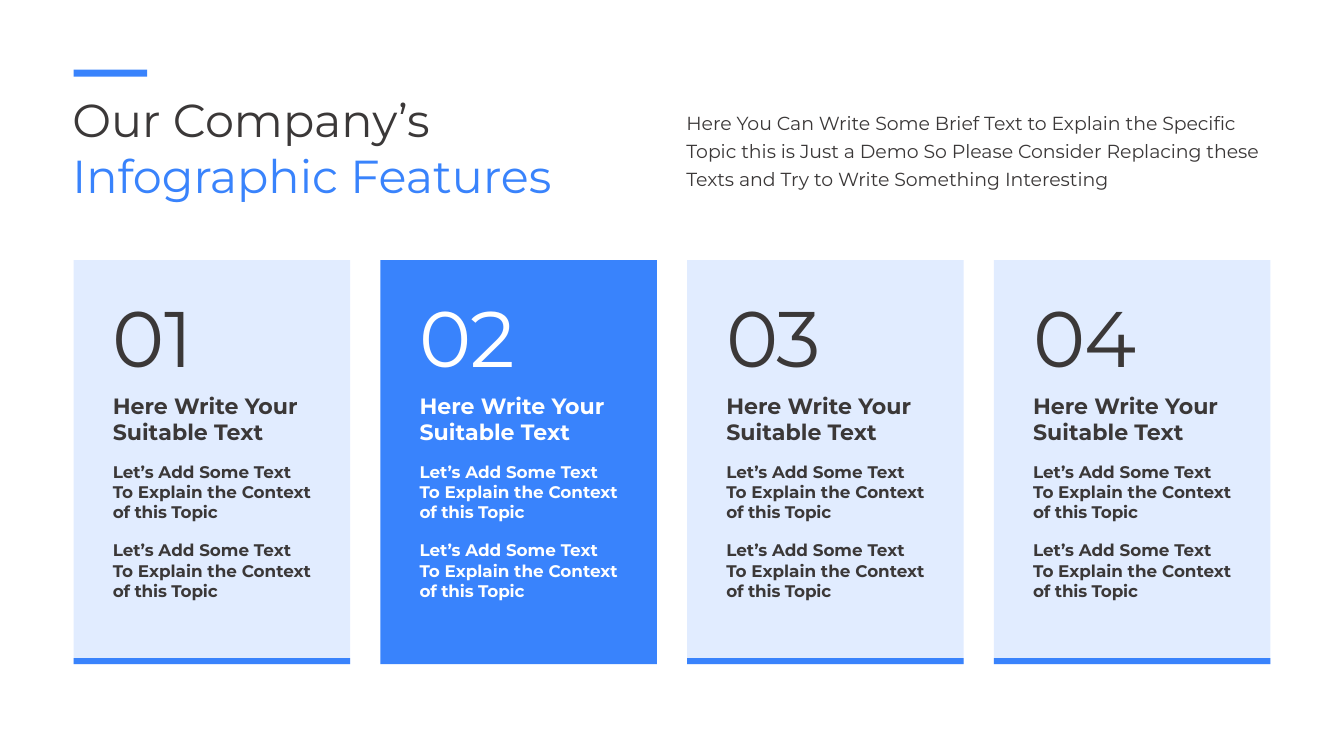
from pptx import Presentation, util as u
from pptx.dml.color import RGBColor
from pptx.enum import shapes, text

COLORS = {"ink": "3B3838", "blue": "3983FC", "pale": "E1ECFF", "white": "FFFFFF"}

TITLE = [("Our Company’s", "ink"), ("Infographic Features", "blue")]
INTRO = ("Here You Can Write Some Brief Text to Explain the Specific Topic this is "
         "Just a Demo So Please Consider Replacing these Texts and Try to Write "
         "Something Interesting")
HEADING = ["Here Write Your", "Suitable Text"]
DETAIL = ["Let’s Add Some Text", "To Explain the Context", "of this Topic"]
CARDS = [
    {"number": "01", "number_width": 1.05, "fill": "pale", "ink": "ink"},
    {"number": "02", "number_width": 1.2, "fill": "blue", "ink": "white"},
    {"number": "03", "number_width": 1.2, "fill": "pale", "ink": "ink"},
    {"number": "04", "number_width": 1.27, "fill": "pale", "ink": "ink"},
]
FORMATS = {
    "title": {"size": u.Pt(33)},
    "intro": {"size": u.Pt(13.5)},
    "number": {"size": u.Pt(56.2)},
    "heading": {"size": u.Pt(15.8), "bold": True},
    "detail": {"size": u.Pt(12), "bold": True},
}
TRACKING = {"number": "-60", "of this Topic": "-10"}

SLIDE_WIDTH, SLIDE_HEIGHT = 13.33, 7.5
MARGIN, GAP = 0.73, 0.3
PITCH = (SLIDE_WIDTH - 2 * MARGIN + GAP) / len(CARDS)
CARD_WIDTH = PITCH - GAP
CARD_TOP, CARD_HEIGHT, STRIPE = 2.58, 4.01, 0.06
TEXT_INSET = 0.29
DETAIL_TOP, DETAIL_PITCH = 4.53, 0.78

deck = Presentation()
deck.slide_width, deck.slide_height = u.Inches(SLIDE_WIDTH), u.Inches(SLIDE_HEIGHT)
slide = deck.slides.add_slide(deck.slide_layouts[6])


def rgb(color):
    return RGBColor.from_string(COLORS[color])


def add_block(left, top, width, height, color):
    block = slide.shapes.add_shape(
        shapes.MSO_SHAPE.RECTANGLE, *map(u.Inches, (left, top, width, height)))
    block.shadow.inherit = False
    block.fill.solid()
    block.fill.fore_color.rgb = rgb(color)
    block.line.fill.background()


def add_text(left, top, width, height, lines, role, wrap=False, spacing=None):
    frame = slide.shapes.add_textbox(
        *map(u.Inches, (left, top, width, height))).text_frame
    frame.word_wrap = wrap
    frame.auto_size = text.MSO_AUTO_SIZE.SHAPE_TO_FIT_TEXT
    for index, (words, color) in enumerate(lines):
        paragraph = frame.add_paragraph() if index else frame.paragraphs[0]
        paragraph.line_spacing = spacing
        run = paragraph.add_run()
        run.text = words
        run.font.name = "Montserrat"
        run.font.color.rgb = rgb(color)
        for attribute, value in FORMATS[role].items():
            setattr(run.font, attribute, value)
        tracking = TRACKING.get(role) or TRACKING.get(words)
        if tracking:
            run.font._element.set("spc", tracking)


add_block(MARGIN, 0.69, 0.73, 0.07, "blue")
add_text(0.62, 0.86, 5.37, 1.21, TITLE, "title")
add_text(6.71, 1, 6.12, 0.92, [(INTRO, "ink")], "intro", wrap=True, spacing=u.Pt(20))

for column, card in enumerate(CARDS):
    left = MARGIN + column * PITCH
    text_left = left + TEXT_INSET
    ink = card["ink"]
    add_block(left, CARD_TOP, CARD_WIDTH, CARD_HEIGHT, card["fill"])
    if card["fill"] == "pale":
        add_block(left, CARD_TOP + CARD_HEIGHT - STRIPE, CARD_WIDTH, STRIPE, "blue")
    add_text(text_left, 2.82, card["number_width"], 1.05, [(card["number"], ink)], "number")
    add_text(text_left, 3.84, 2.08, 0.63, [(line, ink) for line in HEADING], "heading")
    for row in range(2):
        add_text(text_left, DETAIL_TOP + row * DETAIL_PITCH, 2.21, 0.71,
                 [(line, ink) for line in DETAIL], "detail")

deck.save("out.pptx")
